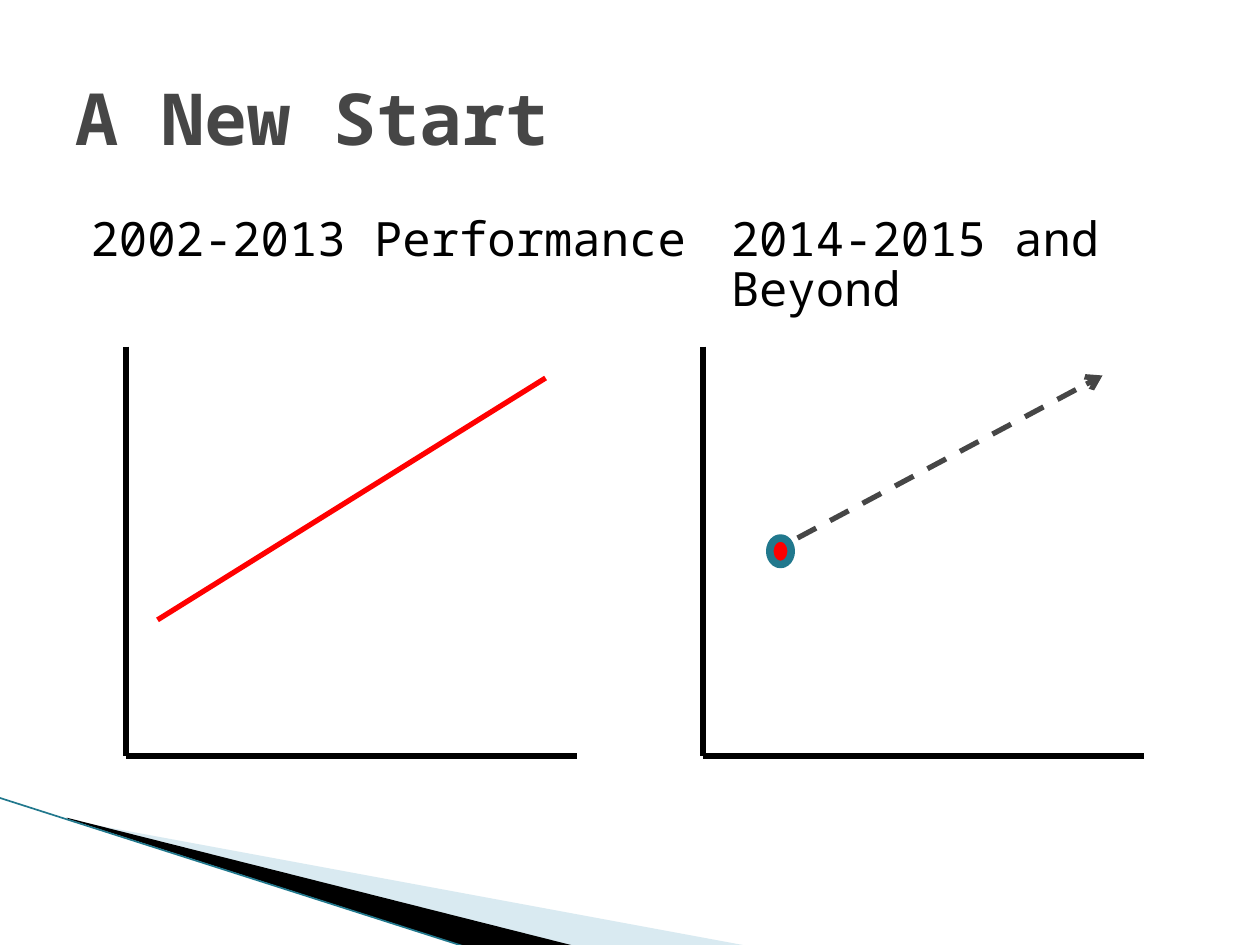
from lxml.etree import SubElement
from pptx import Presentation
from pptx.dml.color import RGBColor
from pptx.enum.dml import MSO_LINE
from pptx.enum.shapes import MSO_CONNECTOR, MSO_SHAPE
from pptx.enum.text import MSO_ANCHOR
from pptx.oxml.ns import qn
from pptx.util import Inches, Pt

BLACK = RGBColor(0x00, 0x00, 0x00)
GRAY = RGBColor(0x46, 0x46, 0x46)
RED = RGBColor(0xFF, 0x00, 0x00)
TEAL = RGBColor(0x21, 0x78, 0x8D)
PALE = RGBColor(0xA0, 0xCB, 0xDC)
FONT = "Noto Sans Mono"


def add_text(slide, text, box, size=27, color=BLACK, bold=False,
             anchor=MSO_ANCHOR.TOP, indent=0.12, spacing=0.88):
    """Add a wrapped text box with one formatted paragraph."""
    frame = slide.shapes.add_textbox(*map(Inches, box)).text_frame
    frame.word_wrap = True
    frame.vertical_anchor = anchor
    frame.margin_left = Inches(0.1 + indent)
    para = frame.paragraphs[0]
    para.text = text
    para.line_spacing = spacing
    font = para.font
    font.name, font.size, font.bold = FONT, Pt(size), bold
    font.color.rgb = color


def add_line(slide, start, end, color=BLACK, width=3, dash=None, arrow=False):
    """Add a straight line, optionally dashed or with an arrowhead."""
    ends = map(Inches, (*start, *end))
    link = slide.shapes.add_connector(MSO_CONNECTOR.STRAIGHT, *ends)
    line = link.line
    line.color.rgb = color
    line.width = Pt(width)
    if dash:
        line.dash_style = dash
    if arrow:
        SubElement(line._get_or_add_ln(), qn("a:tailEnd"), type="arrow")
    SubElement(link._element.spPr, qn("a:effectLst"))


def add_wedge(slide, points, color, alpha=None):
    """Add a filled polygon without an outline."""
    first, *rest = [(Inches(x), Inches(y)) for x, y in points]
    pen = slide.shapes.build_freeform(*first)
    pen.add_line_segments(rest)
    wedge = pen.convert_to_shape()
    wedge.shadow.inherit = False
    wedge.fill.solid()
    wedge.fill.fore_color.rgb = color
    wedge.line.fill.background()
    if alpha:
        tone = wedge._element.spPr.find(".//" + qn("a:srgbClr"))
        SubElement(tone, qn("a:alpha"), val=str(alpha * 1000))


def add_axes(slide, left, right, top=2.75, base=6):
    """Add the vertical and horizontal axis of a sketched graph."""
    add_line(slide, (left, top), (left, base))
    add_line(slide, (left, base), (right, base))


def add_dot(slide, box):
    """Add the outlined starting dot."""
    dot = slide.shapes.add_shape(MSO_SHAPE.OVAL, *map(Inches, box))
    dot.shadow.inherit = False
    dot.fill.solid()
    dot.fill.fore_color.rgb = RED
    dot.line.color.rgb = TEAL
    dot.line.width = Pt(4.33)


def main():
    """Build and save the slide."""
    deck = Presentation()
    deck.slide_width, deck.slide_height = Inches(10), Inches(7.5)
    slide = deck.slides.add_slide(deck.slide_layouts[6])

    add_wedge(slide, [(0.55, 6.51), (5.95, 7.51), (4.56, 7.51), (0.55, 6.5)],
              PALE, alpha=40)
    add_wedge(slide, [(0.53, 6.49), (4.57, 7.51), (3.72, 7.52), (0.54, 6.5)],
              BLACK)
    add_line(slide, (-0.01, 6.33), (3.71, 7.52), TEAL, width=0.95)

    add_text(slide, "A New Start", (0.5, 0.3, 9, 1.25), size=41, color=GRAY,
             bold=True, anchor=MSO_ANCHOR.MIDDLE, indent=0, spacing=1)
    add_text(slide, "2002-2013 Performance", (0.5, 1.67, 9, 4.9))
    add_text(slide, "2014-2015 and Beyond", (5.58, 1.67, 4.42, 4.9))

    add_axes(slide, 1, 4.58)
    add_line(slide, (1.25, 4.92), (4.33, 3), RED)
    add_axes(slide, 5.58, 9.08)
    add_dot(slide, (6.11, 4.27, 0.17, 0.21))
    add_line(slide, (6.33, 4.27), (8.75, 2.98), GRAY,
             dash=MSO_LINE.DASH, arrow=True)
    deck.save("out.pptx")


if __name__ == "__main__":
    main()
